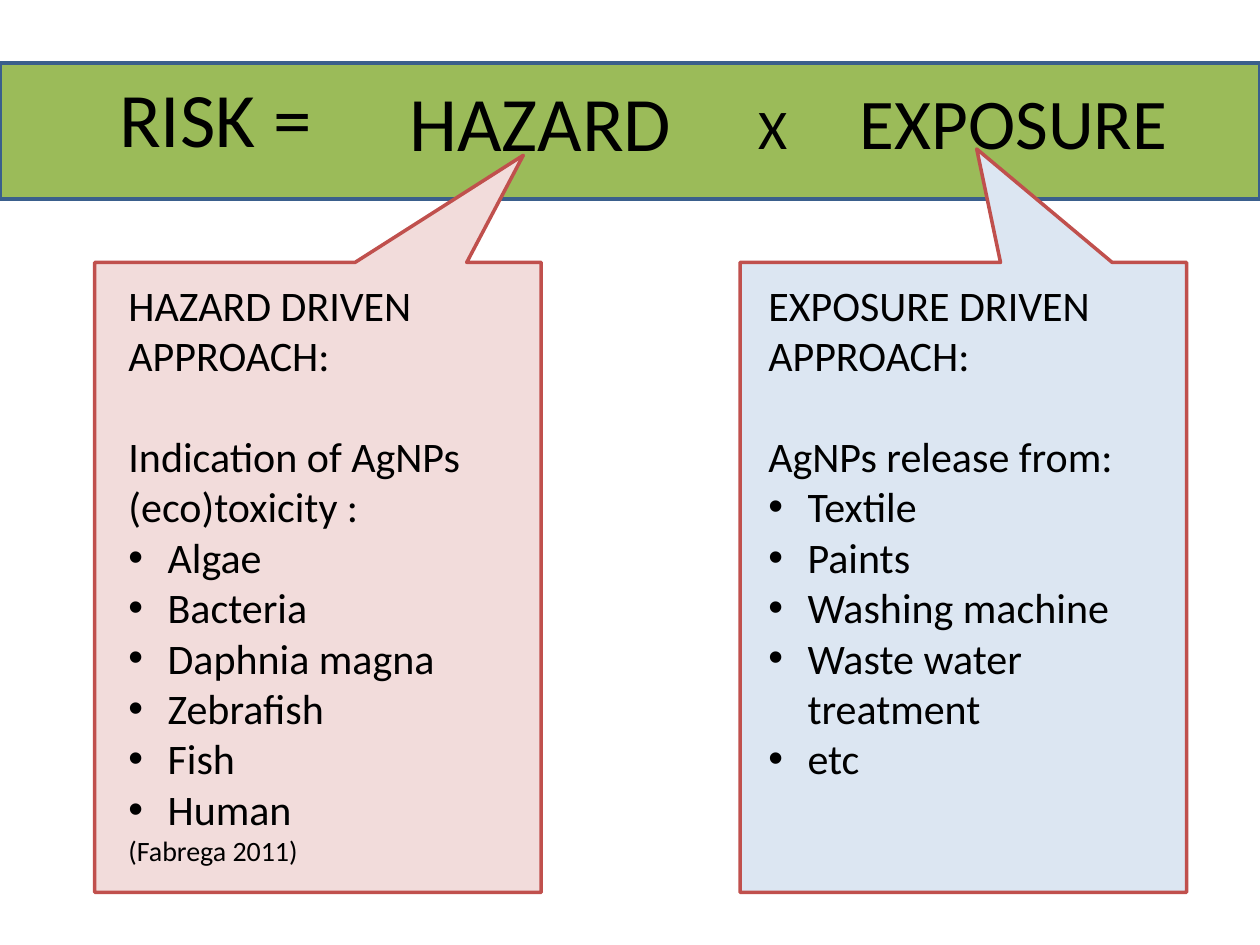
"""Build a slide on risk as hazard times exposure, with a callout for each factor."""
from lxml import etree
from pptx import Presentation
from pptx import util as u
from pptx.dml.color import RGBColor
from pptx.enum import shapes, text
from pptx.oxml.ns import qn


def paint(shape, fill, line):
    shape.shadow.inherit = False
    shape.fill.solid()
    shape.fill.fore_color.rgb = RGBColor.from_string(fill)
    shape.line.color.rgb = RGBColor.from_string(line)
    shape.line.width = u.Pt(2)


def style(para, size):
    for span in para.runs:
        span.font.name = "Calibri"
        span.font.size = u.Pt(size)
        span.font.color.rgb = RGBColor.from_string("000000")


deck = Presentation()
deck.slide_width, deck.slide_height = u.Cm(25.4), u.Cm(19.05)
page = deck.slides.add_slide(deck.slide_layouts[5])
title = page.shapes.title

banner = page.shapes.add_shape(shapes.MSO_SHAPE.RECTANGLE, 0, u.Cm(1.27), deck.slide_width, u.Cm(2.74))
paint(banner, "9BBB59", "3A5F8C")
title.element.addprevious(banner.element)

terms = [
    ("RISK =", 1.27, 0.76, 6.15, 3.18, 44, text.PP_ALIGN.CENTER),
    ("HAZARD", 7.82, 0.84, 6.15, 3.18, 44, text.PP_ALIGN.CENTER),
    ("EXPOSURE", 16.94, 0.84, 6.98, 3.18, 40.7, text.PP_ALIGN.CENTER),
    ("X", 15.04, 1.75, 2.11, 1.63, 32, text.PP_ALIGN.LEFT),
]
for wording, left, top, width, height, size, align in terms:
    place = [u.Cm(length) for length in (left, top, width, height)]
    if wording == "RISK =":
        box = title
        box.left, box.top, box.width, box.height = place
    else:
        box = page.shapes.add_textbox(*place)
    frame = box.text_frame
    frame.text = wording
    frame.word_wrap = True
    frame.auto_size = text.MSO_AUTO_SIZE.NONE
    frame.vertical_anchor = text.MSO_ANCHOR.MIDDLE
    frame.paragraphs[0].alignment = align
    style(frame.paragraphs[0], size)

approaches = [
    (1.91, 2.34, 8.26, 12.57, "F2DCDB", (0.46, -0.67),
     "HAZARD DRIVEN APPROACH:", "Indication of AgNPs (eco)toxicity :",
     ["Algae", "Bacteria", "Daphnia magna", "Zebrafish", "Fish", "Human"], "(Fabrega 2011)"),
    (14.92, 15.24, 8.46, 10.52, "DCE6F2", (0.03, -0.68),
     "EXPOSURE DRIVEN APPROACH:", "AgNPs release from:",
     ["Textile", "Paints", "Washing machine", "Waste water treatment", "etc"], None),
]
for left, text_left, text_width, text_height, fill, tip, heading, lead, items, source in approaches:
    callout = page.shapes.add_shape(
        shapes.MSO_SHAPE.RECTANGULAR_CALLOUT, u.Cm(left), u.Cm(5.29), u.Cm(9), u.Cm(12.7))
    callout.adjustments[0], callout.adjustments[1] = tip
    paint(callout, fill, "C0504D")

    box = page.shapes.add_textbox(u.Cm(text_left), u.Cm(5.5), u.Cm(text_width), u.Cm(text_height))
    frame = box.text_frame
    frame.word_wrap = True
    lines = [heading, lead, *items] + ([source] if source else [])
    frame.text = "\n".join(lines)
    for para in frame.paragraphs:
        if para.text in items:
            properties = para._p.get_or_add_pPr()
            properties.set("marL", str(u.Cm(0.79)))
            properties.set("indent", str(-u.Cm(0.79)))
            etree.SubElement(properties, qn("a:buFont"), typeface="Arial")
            etree.SubElement(properties, qn("a:buChar"), char="•")
        style(para, 16 if para.text == source else 24)
    frame.paragraphs[1].space_before = u.Pt(29)

deck.save("out.pptx")
